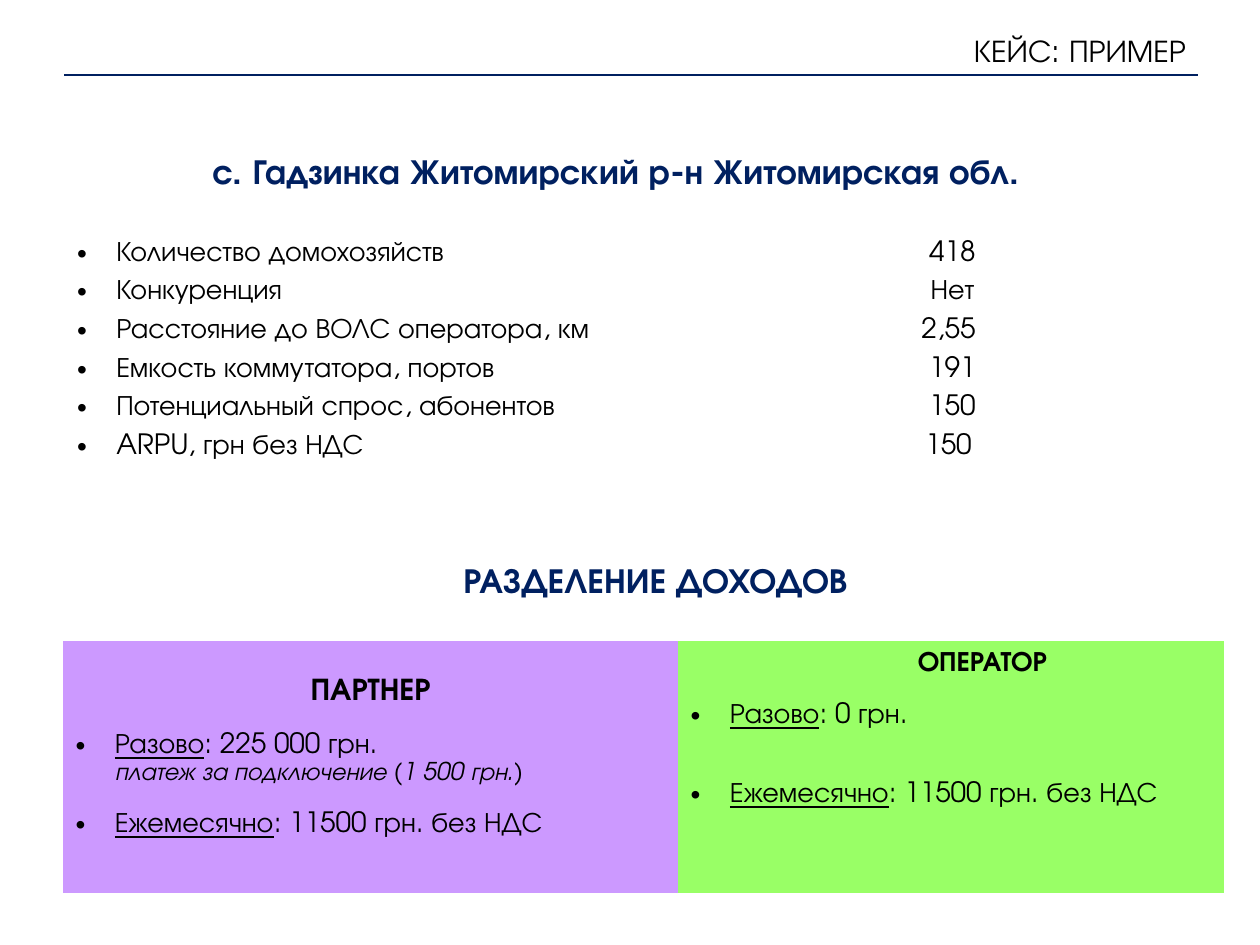
import dataclasses
import pptx
import pptx.dml.color
import pptx.enum.shapes
import pptx.enum.text
import pptx.oxml.ns
import pptx.util
from lxml import etree

Cm = pptx.util.Cm
Pt = pptx.util.Pt
Rgb = pptx.dml.color.RGBColor
Align = pptx.enum.text.PP_ALIGN
Anchor = pptx.enum.text.MSO_ANCHOR
qn = pptx.oxml.ns.qn


@dataclasses.dataclass(frozen=True)
class Theme:
    font: str = "TeX Gyre Adventor"
    ink: Rgb = Rgb.from_string("000000")
    navy: Rgb = Rgb.from_string("002060")
    partner: Rgb = Rgb.from_string("CC99FF")
    operator: Rgb = Rgb.from_string("99FF66")
    heading: Pt = Pt(20)
    title: Pt = Pt(18)
    body: Pt = Pt(16)
    note: Pt = Pt(14)
    pitch: Pt = Pt(15)


theme = Theme()


def style(para, size, align=Align.LEFT, color=theme.ink, bold=False):
    para.alignment = align
    para.font.name = theme.font
    para.font.size = size
    para.font.bold = bold
    para.font.color.rgb = color


def indent(para, left, bullet=True):
    props = para._p.get_or_add_pPr()
    props.set("marL", str(left))
    props.set("indent", str(-left if bullet else 0))
    if bullet:
        etree.SubElement(props, qn("a:buFont")).set("typeface", "Arial")
        etree.SubElement(props, qn("a:buChar")).set("char", "•")
        for defaults in props.findall(qn("a:defRPr")):
            props.append(defaults)


deck = pptx.Presentation()
deck.slide_width = Cm(25.4)
deck.slide_height = Cm(19.05)
page = deck.slides.add_slide(deck.slide_layouts[6])

headings = [
    ("КЕЙС: ПРИМЕР", 1.3, 0.53, 22.86, 0.97, theme.title, Align.RIGHT, theme.ink, False),
    ("с. Гадзинка Житомирский р-н Житомирская обл.", 1.3, 2.87, 22.23, 1.12,
     theme.heading, Align.CENTER, theme.navy, True),
    ("РАЗДЕЛЕНИЕ ДОХОДОВ", 9.09, 11.13, 8.94, 1.12,
     theme.heading, Align.LEFT, theme.navy, True),
]
for text, left, top, width, height, size, align, color, bold in headings:
    box = page.shapes.add_textbox(Cm(left), Cm(top), Cm(width), Cm(height))
    box.text_frame.word_wrap = True
    box.text_frame.vertical_anchor = Anchor.MIDDLE
    para = box.text_frame.paragraphs[0]
    para.text = text
    style(para, size, align, color, bold)

rule = page.shapes.add_connector(
    pptx.enum.shapes.MSO_CONNECTOR.STRAIGHT, Cm(1.3), Cm(1.52), Cm(24.16), Cm(1.52))
rule.line.color.rgb = theme.navy
rule.line.width = Pt(1.25)
etree.SubElement(rule._element.spPr, qn("a:effectLst"))

facts = [
    ("Количество домохозяйств", "418"),
    ("Конкуренция", "Нет"),
    ("Расстояние до ВОЛС оператора, км", "2,55 "),
    ("Емкость коммутатора, портов", "191"),
    ("Потенциальный спрос, абонентов", "150"),
    ("ARPU, грн без НДС", "150 "),
]
tables = []
for rows, left, top, height in [(len(facts), 1.3, 4.72, 4.68), (1, 1.27, 12.93, 5.08)]:
    frame = page.shapes.add_table(rows, 2, Cm(left), Cm(top), Cm(23.4), Cm(height))
    table = frame.table
    table.first_row = table.horz_banding = False
    style_id = frame._element.find(".//" + qn("a:tableStyleId"))
    style_id.text = "{2D5ABB26-0587-4C30-8999-92F81FD0307C}"
    table.columns[0].width = Cm(12.4)
    table.columns[1].width = Cm(11)
    tables.append(table)
fact_table, share_table = tables

for row, fact in enumerate(facts):
    for column, text in enumerate(fact):
        cell = fact_table.cell(row, column)
        cell.fill.background()
        cell.vertical_anchor = Anchor.MIDDLE
        cell.margin_top = cell.margin_bottom = 0
        para = cell.text_frame.paragraphs[0]
        para.text = text
        style(para, theme.body, Align.CENTER if column else Align.LEFT)
        if column == 0:
            indent(para, Cm(0.79))

shares = [
    ("ПАРТНЕР", theme.title, theme.partner, Anchor.MIDDLE, 0, 0.13, 0.46, [
        ("Разово", ": 225 000 грн.", 1),
        ("", "платеж за подключение (1 500 грн.)", 0),
        ("Ежемесячно", ": 11500 грн. без НДС", 1)]),
    ("ОПЕРАТОР", theme.body, theme.operator, Anchor.TOP, 1.27, 0.18, 0.13, [
        ("Разово", ": 0 грн.", 1),
        ("Ежемесячно", ": 11500 грн. без НДС", 2)]),
]
for column, (name, size, color, anchor, shift, above, below, lines) in enumerate(shares):
    cell = share_table.cell(0, column)
    cell.fill.solid()
    cell.fill.fore_color.rgb = color
    cell.vertical_anchor = anchor
    cell.margin_top = Cm(above)
    cell.margin_bottom = Cm(below)
    para = cell.text_frame.paragraphs[0]
    para.text = name
    para.line_spacing = theme.pitch
    style(para, size, Align.CENTER, bold=True)
    indent(para, Cm(shift), bullet=False)
    for label, text, gaps in lines:
        para = cell.text_frame.add_paragraph()
        para.line_spacing = theme.pitch
        para.space_before = gaps * theme.pitch
        style(para, theme.body if label else theme.note)
        para.font.italic = not label
        indent(para, Cm(0.79), bullet=bool(label))
        if label:
            span = para.add_run()
            span.text = label
            span.font.underline = True
        para.add_run().text = text

deck.save("out.pptx")
